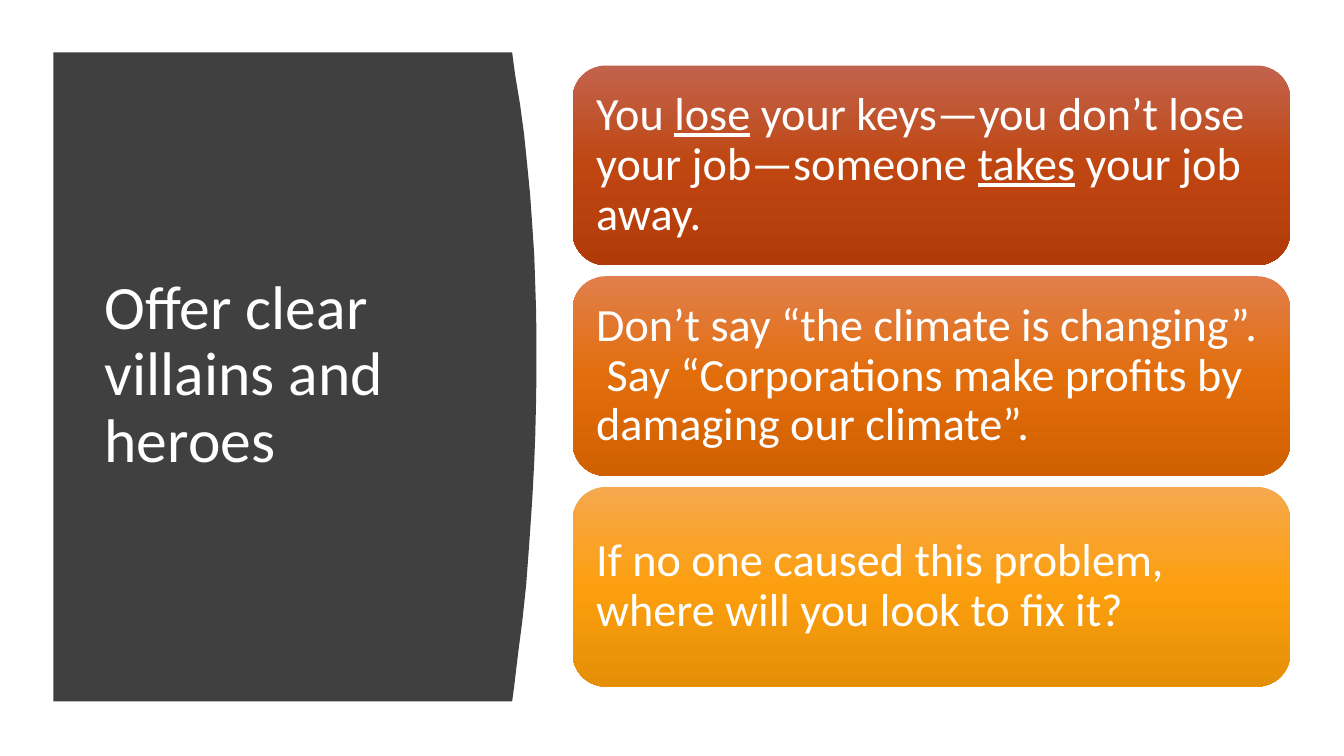
from copy import deepcopy

from pptx import Presentation
from pptx.dml import color
from pptx.enum import shapes, text
from pptx.oxml import ns
from pptx.util import Pt

FONT = "Calibri"
COLORS = {"panel": "404040", "text": "FFFFFF"}
PANEL_LEFT, PANEL_TOP, PANEL_BOTTOM = 38.2, 37.4, 501.1
PANEL_CURVE = [
    (365.8, 37.4), (367.9, 53.3), (371.5, 74.9), (374.4, 96.5),
    (376.6, 118.1), (378.7, 139.7), (380.2, 161.3), (381.6, 182.2),
    (382.3, 203), (383, 224), (383.2, 254.2), (383, 283.7),
    (382.3, 311.8), (381.6, 329.8), (380.2, 356.4), (378, 388.8),
    (375.8, 418.3), (373, 444.2), (370.1, 466.6), (367.2, 491), (365.8, 501.1),
]
CARD_LEFT, CARD_TOP, CARD_WIDTH, CARD_HEIGHT = 409, 46.8, 512.6, 142.6
CARD_PITCH, CARD_INSET = 150.5, 9.9
CARDS = [
    (["C2634D", "BF4611", "B13B08"],
     [("You ", False), ("lose", True),
      (" your keys—you don’t lose your job—someone ", False),
      ("takes", True), (" your job away.", False)]),
    (["E17F4C", "E26D0B", "D16001"],
     [("Don’t say “the climate is changing”.  Say “Corporations make "
       "profits by damaging our climate”.", False)]),
    (["F5A84E", "FC9F0E", "E58F07"],
     [("If no one caused this problem, where will you look to fix it?", False)]),
]


def rgb(value):
    return color.RGBColor.from_string(value)


def write_text(shape, runs, size):
    frame = shape.text_frame
    frame.word_wrap = True
    frame.vertical_anchor = text.MSO_ANCHOR.MIDDLE
    paragraph = frame.paragraphs[0]
    paragraph.alignment = text.PP_ALIGN.LEFT
    paragraph.line_spacing = 0.9
    paragraph.font.name = FONT
    paragraph.font.size = Pt(size)
    paragraph.font.color.rgb = rgb(COLORS["text"])
    for words, underlined in runs:
        run = paragraph.add_run()
        run.text = words
        if underlined:
            run.font.underline = True


def fill_gradient(shape, stop_colors):
    fill = shape.fill
    fill.gradient()
    fill.gradient_angle = 270
    stop_list = shape._element.spPr.find(".//" + ns.qn("a:gsLst"))
    stop_list.append(deepcopy(stop_list[-1]))
    last = len(stop_colors) - 1
    for index, (stop, value) in enumerate(zip(fill.gradient_stops, stop_colors)):
        stop.position = index / last
        stop.color.rgb = rgb(value)


def add_panel(slide):
    builder = slide.shapes.build_freeform(Pt(PANEL_LEFT), Pt(PANEL_TOP))
    outline = PANEL_CURVE + [(PANEL_LEFT, PANEL_BOTTOM)]
    builder.add_line_segments([(Pt(x), Pt(y)) for x, y in outline], close=True)
    panel = builder.convert_to_shape()
    panel.shadow.inherit = False
    panel.fill.solid()
    panel.fill.fore_color.rgb = rgb(COLORS["panel"])
    panel.line.fill.background()


def add_title(slide, words):
    box = slide.shapes.add_textbox(Pt(67.7), Pt(79.9), Pt(269.3), Pt(377.3))
    write_text(box, [(words, False)], 44)


def add_card(slide, top, stop_colors, runs):
    card = slide.shapes.add_shape(
        shapes.MSO_SHAPE.ROUNDED_RECTANGLE,
        Pt(CARD_LEFT), Pt(top), Pt(CARD_WIDTH), Pt(CARD_HEIGHT))
    card.shadow.inherit = False
    card.line.fill.background()
    fill_gradient(card, stop_colors)
    frame = card.text_frame
    frame.margin_left = frame.margin_right = Pt(CARD_INSET)
    frame.margin_top = frame.margin_bottom = Pt(CARD_INSET)
    write_text(card, runs, 33)


def main():
    presentation = Presentation()
    presentation.slide_width = Pt(960)
    presentation.slide_height = Pt(540)
    slide = presentation.slides.add_slide(presentation.slide_layouts[6])
    add_panel(slide)
    add_title(slide, "Offer clear villains and heroes")
    for index, (stop_colors, runs) in enumerate(CARDS):
        add_card(slide, CARD_TOP + index * CARD_PITCH, stop_colors, runs)
    presentation.save("out.pptx")


if __name__ == "__main__":
    main()
